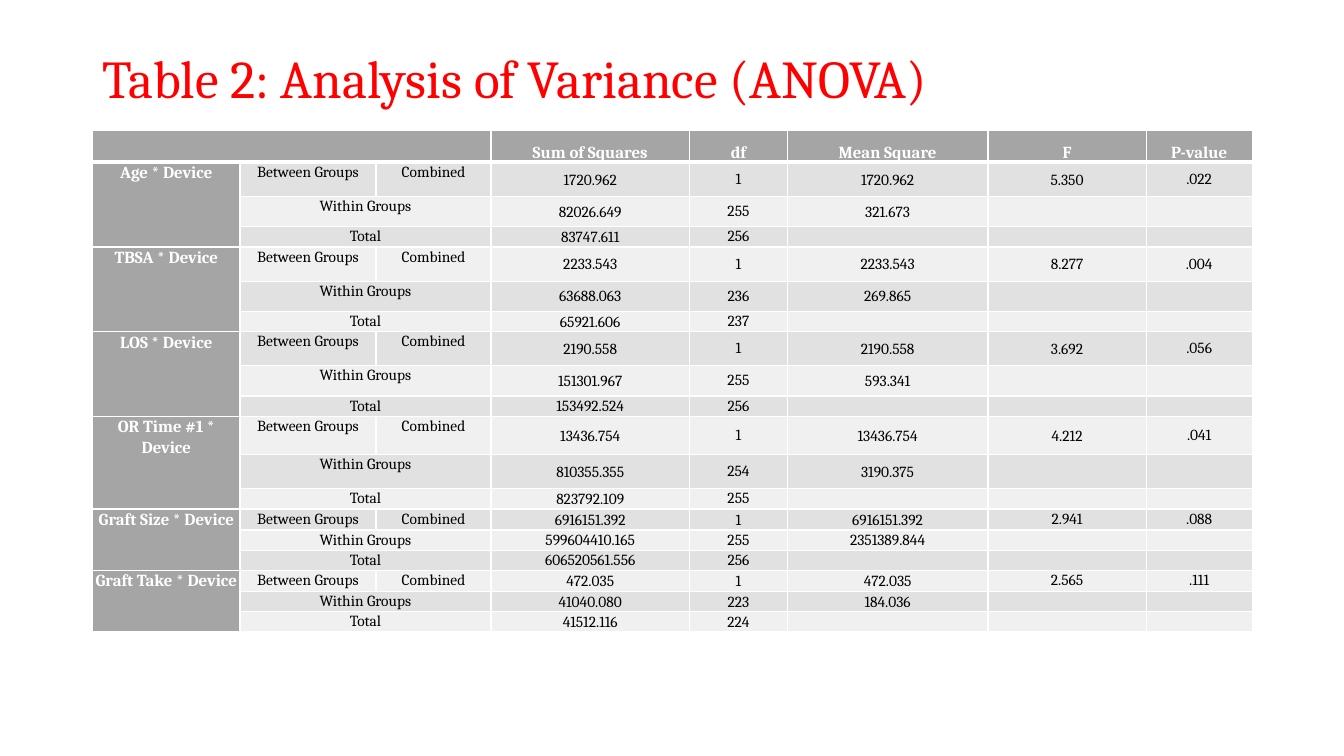
"""Build the ANOVA results table slide."""
from dataclasses import dataclass

from lxml import etree
from pptx import Presentation
from pptx.dml.color import RGBColor
from pptx.enum.text import MSO_ANCHOR, PP_ALIGN
from pptx.oxml.ns import qn
from pptx.slide import Slide
from pptx.table import Table, _Cell
from pptx.util import Inches, Pt

TOP, MIDDLE, BOTTOM = MSO_ANCHOR.TOP, MSO_ANCHOR.MIDDLE, MSO_ANCHOR.BOTTOM
CENTER = PP_ALIGN.CENTER


@dataclass(frozen=True)
class Theme:
    """Fonts, colours and type sizes."""
    font: str = "Cambria"
    title: str = "FF0000"
    dark: str = "A5A5A5"
    bands: tuple[str, str] = ("F0F0F0", "E1E1E1")
    border: str = "FFFFFF"
    light_text: str = "FFFFFF"
    dark_text: str = "000000"
    title_size: int = 38
    head_size: int = 12
    body_size: int = 11
    spacing: float = 1.07


@dataclass(frozen=True)
class Analysis:
    """One variable with its between, within and total rows."""
    name: str
    between: tuple[str, ...]
    within: tuple[str, ...]
    total: tuple[str, ...]
    heights: tuple[float, float, float]


THEME = Theme()
COLUMN_WIDTHS = (1.46, 1.35, 1.14, 1.97, 0.97, 1.99, 1.57, 1.05)
HEADER_HEIGHT = 0.32
HEADERS = ("Sum of Squares", "df", "Mean Square", "F", "P-value")
FIRST_VALUE = 3
TALL, OR_TALL, SHORT = (0.34, 0.3, 0.2), (0.38, 0.34, 0.2), (0.21, 0.2, 0.2)
ANALYSES = (
    Analysis("Age * Device", ("1720.962", "1", "1720.962", "5.350", ".022"),
             ("82026.649", "255", "321.673"), ("83747.611", "256"), TALL),
    Analysis("TBSA * Device", ("2233.543", "1", "2233.543", "8.277", ".004"),
             ("63688.063", "236", "269.865"), ("65921.606", "237"), TALL),
    Analysis("LOS * Device", ("2190.558", "1", "2190.558", "3.692", ".056"),
             ("151301.967", "255", "593.341"), ("153492.524", "256"), TALL),
    Analysis("OR Time #1 * Device", ("13436.754", "1", "13436.754", "4.212", ".041"),
             ("810355.355", "254", "3190.375"), ("823792.109", "255"), OR_TALL),
    Analysis("Graft Size * Device", ("6916151.392", "1", "6916151.392", "2.941", ".088"),
             ("599604410.165", "255", "2351389.844"), ("606520561.556", "256"), SHORT),
    Analysis("Graft Take * Device", ("472.035", "1", "472.035", "2.565", ".111"),
             ("41040.080", "223", "184.036"), ("41512.116", "224"), SHORT),
)


def add_title(s: Slide, text: str) -> None:
    """Add the slide title."""
    tf = s.shapes.add_textbox(Inches(0.92), Inches(0.19), Inches(11.5), Inches(1.23)).text_frame
    tf.word_wrap = True
    tf.vertical_anchor = MIDDLE
    tf.text = text
    p = tf.paragraphs[0]
    p.line_spacing = 0.9
    font = p.runs[0].font
    font.name, font.size = THEME.font, Pt(THEME.title_size)
    font.color.rgb = RGBColor.from_string(THEME.title)


def style_cell(cell: _Cell, fill: str, top: int = 1, bottom: int = 1) -> None:
    """Set a cell's margins, borders, fill and empty-paragraph size."""
    cell.margin_left = cell.margin_right = Inches(0.02)
    cell.margin_top = cell.margin_bottom = 0
    tc_pr = cell._tc.get_or_add_tcPr()
    for side, width in (("L", 1), ("R", 1), ("T", top), ("B", bottom)):
        ln = etree.SubElement(tc_pr, qn(f"a:ln{side}"), w=str(Pt(width)))
        solid = etree.SubElement(ln, qn("a:solidFill"))
        etree.SubElement(solid, qn("a:srgbClr"), val=THEME.border)
    cell.fill.solid()
    cell.fill.fore_color.rgb = RGBColor.from_string(fill)
    p = cell.text_frame.paragraphs[0]
    etree.SubElement(p._p, qn("a:endParaRPr"), sz=str(THEME.body_size * 100))


def write(cell: _Cell, text: str, anchor: MSO_ANCHOR, heading: bool = False,
          spacing: float | None = THEME.spacing) -> None:
    """Write centred text in a cell."""
    cell.vertical_anchor = anchor
    p = cell.text_frame.paragraphs[0]
    p.text = text
    p.alignment = CENTER
    p.line_spacing = spacing
    font = p.runs[0].font
    font.name, font.bold = THEME.font, heading
    font.size = Pt(THEME.head_size if heading else THEME.body_size)
    font.color.rgb = RGBColor.from_string(THEME.light_text if heading else THEME.dark_text)


def write_analysis(table: Table, top: int, analysis: Analysis) -> None:
    """Fill the three rows of one analysis."""
    table.cell(top, 0).merge(table.cell(top + 2, 0))
    write(table.cell(top, 0), analysis.name, TOP, heading=True)
    write(table.cell(top, 1), "Between Groups", TOP)
    write(table.cell(top, 2), "Combined", TOP)
    for row, label in ((top + 1, "Within Groups"), (top + 2, "Total")):
        table.cell(row, 1).merge(table.cell(row, 2))
        write(table.cell(row, 1), label, TOP)
    single = ("F", "P-value") if analysis.heights == SHORT else ("df", "P-value")
    for row, values in enumerate((analysis.between, analysis.within, analysis.total), top):
        for col, (header, value) in enumerate(zip(HEADERS, values), FIRST_VALUE):
            write(table.cell(row, col), value, MIDDLE,
                  spacing=None if header in single else THEME.spacing)


def add_anova_table(s: Slide) -> None:
    """Add the table with its header and all analyses."""
    heights = [HEADER_HEIGHT, *(h for a in ANALYSES for h in a.heights)]
    table = s.shapes.add_table(len(heights), len(COLUMN_WIDTHS), Inches(0.92), Inches(1.29),
                               Inches(sum(COLUMN_WIDTHS)), Inches(sum(heights))).table
    table.first_row = table.horz_banding = False
    for column, width in zip(table.columns, COLUMN_WIDTHS):
        column.width = Inches(width)
    for row, height in enumerate(heights):
        table.rows[row].height = Inches(height)
        for col in range(len(COLUMN_WIDTHS)):
            fill = THEME.dark if row == 0 or col == 0 else THEME.bands[row % 2]
            style_cell(table.cell(row, col), fill,
                       top=3 if row == 1 else 1, bottom=3 if row == 0 else 1)
    table.cell(0, 0).merge(table.cell(0, FIRST_VALUE - 1))
    for col, header in enumerate(HEADERS, FIRST_VALUE):
        spaced = header in ("Sum of Squares", "P-value")
        write(table.cell(0, col), header, BOTTOM, heading=True,
              spacing=THEME.spacing if spaced else None)
    for i, analysis in enumerate(ANALYSES):
        write_analysis(table, 1 + 3 * i, analysis)


def main() -> None:
    """Build and save the presentation."""
    prs = Presentation()
    prs.slide_width, prs.slide_height = Inches(13.33), Inches(7.5)
    s = prs.slides.add_slide(prs.slide_layouts[6])
    add_title(s, "Table 2: Analysis of Variance (ANOVA)")
    add_anova_table(s)
    prs.save("out.pptx")


if __name__ == "__main__":
    main()
